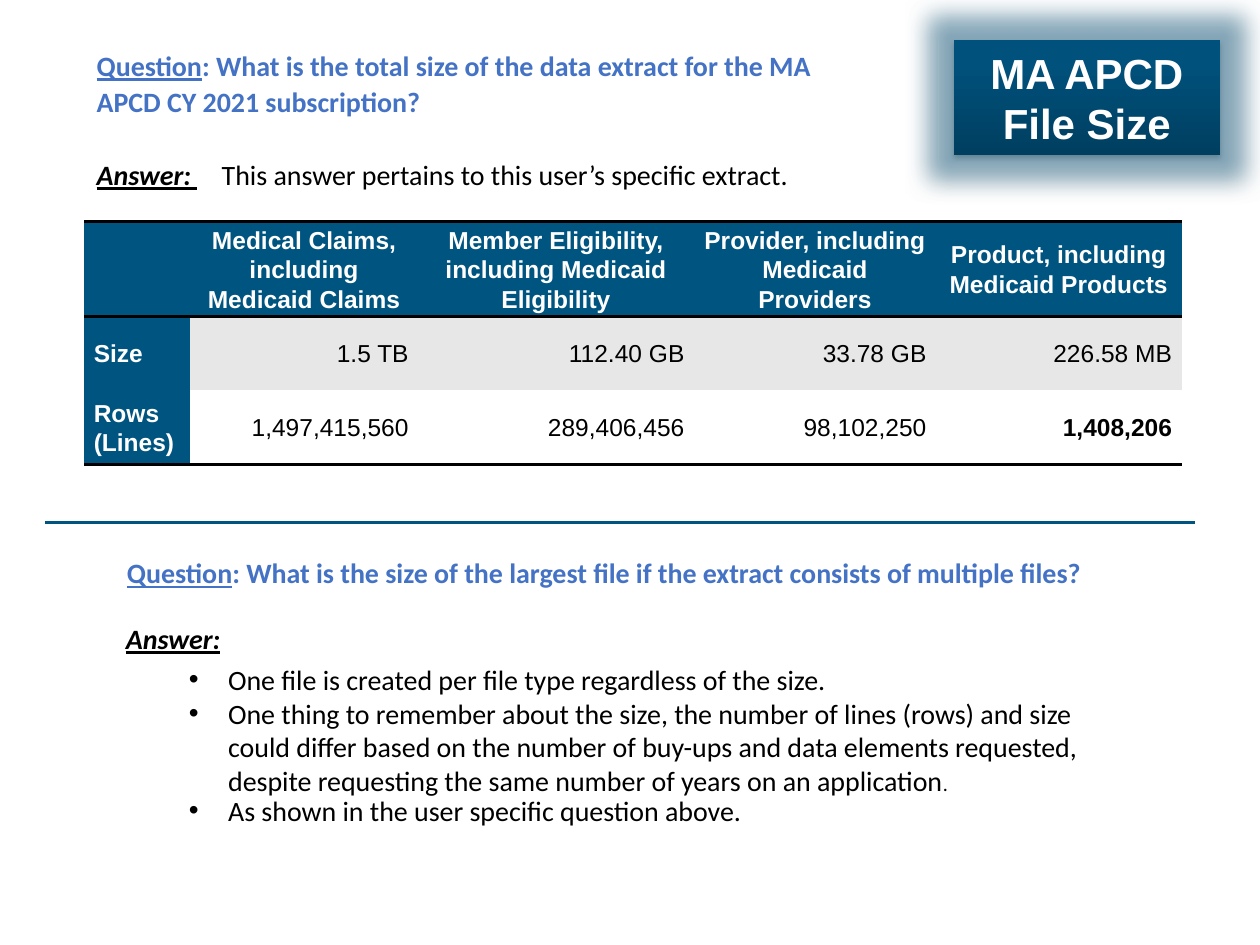
import lxml.etree
import pptx
import pptx.dml.color
import pptx.enum.shapes
import pptx.enum.text
import pptx.oxml
import pptx.oxml.ns
import pptx.util

Cm, Pt = pptx.util.Cm, pptx.util.Pt
ALIGN, ANCHOR = pptx.enum.text.PP_ALIGN, pptx.enum.text.MSO_ANCHOR
COLORS = {"navy": "005480", "blue": "4472C4", "black": "000000", "white": "FFFFFF",
          "band": "E7E7E7", "deep": "003F60", "mid": "00517C", "light": "00527D"}
NAMESPACE = 'xmlns:a="http://schemas.openxmlformats.org/drawingml/2006/main"'

# Run styles
LABEL = dict(color="blue", bold=True, underline=True)
QUESTION = dict(color="blue", bold=True)
ANSWER = dict(bold=True, italic=True, underline=True)
BODY = dict()
BULLET = dict(bullet=True)

# Text boxes: place in cm, anchor, paragraphs of (runs, format)
TEXTS = [
    ((1.7, 0.81, 15.77, 3.15), ANCHOR.TOP, [
        ([("Question", LABEL),
          (": What is the total size of the data extract for the MA APCD CY 2021 subscription?",
           QUESTION)], dict(spacing=1.07, after=21)),
        ([("Answer: ", ANSWER)], dict(spacing=1.07)),
    ]),
    ((4.22, 3.05, 17.73, 1.7), ANCHOR.TOP, [
        ([("This answer pertains to this user’s specific extract.", BODY)], dict()),
    ]),
    ((2.31, 10.8, 21.26, 1.22), ANCHOR.BOTTOM, [
        ([("Question", LABEL),
          (": What is the size of the largest file if the extract consists of multiple files?",
           QUESTION)], dict(spacing=0.9, after=6)),
    ]),
    ((2.29, 12.19, 20.42, 4.9), ANCHOR.MIDDLE, [
        ([("Answer:", ANSWER)], dict(spacing=0.9, after=6)),
        ([("One file is created per file type regardless of the size.", BODY)],
         dict(BULLET, spacing=0.9)),
        ([("One thing to remember about the size, the number of lines (rows) and size could "
           "differ based on the number of buy-ups and data elements requested, despite "
           "requesting the same number of years on an application", BODY),
          (".", dict(font="Lato", size=11))], BULLET),
        ([("As shown in the user specific question above.", BODY)],
         dict(BULLET, spacing=0.9, after=6)),
    ]),
]

TITLE = "MA APCD File Size"
TITLE_PLACE = (19.23, 0.81, 5.36, 2.31)
TABLE = [
    ["", "Medical Claims, including Medicaid Claims",
     "Member Eligibility, including Medicaid Eligibility",
     "Provider, including Medicaid Providers", "Product, including Medicaid Products"],
    ["Size", "1.5 TB", "112.40 GB", "33.78 GB", "226.58 MB"],
    ["Rows (Lines)", "1,497,415,560", "289,406,456", "98,102,250", "1,408,206"],
]
TABLE_CORNER = (1.7, 4.47)
COLUMN_WIDTHS = (2.13, 4.6, 5.56, 4.88, 4.95)
ROW_HEIGHTS = (1.91, 1.49, 1.49)
NO_GRID_STYLE = "{2D5ABB26-0587-4C30-8999-92F81FD0307C}"


def rgb(name):
    return pptx.dml.color.RGBColor.from_string(COLORS[name])


def add_xml(parent, xml, index=None):
    element = pptx.oxml.parse_xml(xml.replace(">", f" {NAMESPACE}>", 1)
                                  if "/>" not in xml.split(">")[0] + ">"
                                  else xml.replace("/>", f" {NAMESPACE}/>", 1))
    parent.insert(len(parent) if index is None else index, element)


def add_run(para, text, font="Calibri", size=16, color="black",
            bold=False, italic=False, underline=False):
    span = para.add_run()
    span.text = text
    span.font.name, span.font.size = font, Pt(size)
    span.font.bold, span.font.italic, span.font.underline = bold, italic, underline
    span.font.color.rgb = rgb(color)


def format_para(para, spacing=None, after=0, bullet=False):
    para.line_spacing, para.space_after = spacing, Pt(after)
    if bullet:
        properties = para._p.get_or_add_pPr()
        properties.set("marL", str(Cm(2.06)))
        properties.set("indent", str(-Cm(0.79)))
        add_xml(properties, '<a:buFont typeface="Arial"/>')
        add_xml(properties, '<a:buChar char="•"/>')


def add_text(slide, place, anchor, paragraphs):
    frame = slide.shapes.add_textbox(*map(Cm, place)).text_frame
    frame.word_wrap, frame.vertical_anchor = True, anchor
    for number, (runs, layout) in enumerate(paragraphs):
        para = frame.add_paragraph() if number else frame.paragraphs[0]
        format_para(para, **layout)
        for text, style in runs:
            add_run(para, text, **style)


def add_border(cell, side, index):
    add_xml(cell._tc.get_or_add_tcPr(),
            f'<a:{side} w="{Pt(2)}"><a:solidFill><a:srgbClr val="{COLORS["black"]}"/>'
            f'</a:solidFill></a:{side}>', index)


def fill_cell(cell, text, row, column):
    heading = row == 0 or column == 0
    cell.fill.solid()
    cell.fill.fore_color.rgb = rgb("navy" if heading else "band" if row == 1 else "white")
    cell.margin_left = cell.margin_right = Cm(0.19)
    cell.margin_top = cell.margin_bottom = 0
    cell.vertical_anchor = ANCHOR.MIDDLE
    if row != 1:
        add_border(cell, "lnB", 0)
    if row == 0:
        add_border(cell, "lnT", 0)
    if text:
        para = cell.text_frame.paragraphs[0]
        format_para(para, spacing=1.07, after=8)
        para.alignment = ALIGN.CENTER if row == 0 else ALIGN.RIGHT if column else ALIGN.LEFT
        last = row == len(TABLE) - 1 and column == len(COLUMN_WIDTHS) - 1
        add_run(para, text, "Arial", 14, "white" if heading else "black", heading or last)


def add_size_table(slide):
    size = (sum(COLUMN_WIDTHS), sum(ROW_HEIGHTS))
    frame = slide.shapes.add_table(len(TABLE), len(COLUMN_WIDTHS),
                                   *map(Cm, TABLE_CORNER + size))
    table = frame.table
    table.horz_banding = table.first_row = False
    table._tbl.tblPr.find(pptx.oxml.ns.qn("a:tableStyleId")).text = NO_GRID_STYLE
    for column, width in zip(table.columns, COLUMN_WIDTHS):
        column.width = Cm(width)
    for row, height in zip(table.rows, ROW_HEIGHTS):
        row.height = Cm(height)
    for row, texts in enumerate(TABLE):
        for column, text in enumerate(texts):
            fill_cell(table.cell(row, column), text, row, column)


def format_title(title):
    title.left, title.top, title.width, title.height = map(Cm, TITLE_PLACE)
    frame = title.text_frame
    frame.word_wrap, frame.vertical_anchor = True, ANCHOR.MIDDLE
    para = frame.paragraphs[0]
    para.alignment = ALIGN.CENTER
    add_run(para, TITLE, "Arial", 24, "white", bold=True)
    # Gradient from the bottom up, with a glow and a soft shadow
    stops = "".join(f'<a:gs pos="{position * 1000}"><a:srgbClr val="{COLORS[name]}"/></a:gs>'
                    for position, name in ((0, "deep"), (80, "mid"), (100, "light")))
    properties = title._element.spPr
    add_xml(properties, '<a:gradFill rotWithShape="1"><a:gsLst>' + stops +
            '</a:gsLst><a:lin ang="16200000" scaled="0"/></a:gradFill>')
    add_xml(properties, f'<a:effectLst><a:glow rad="{Pt(28)}"><a:srgbClr val="{COLORS["navy"]}">'
            '<a:alpha val="40000"/></a:srgbClr></a:glow>'
            f'<a:outerShdw blurRad="{Pt(3.1)}" dist="{Pt(1.8)}" dir="5400000" rotWithShape="0">'
            f'<a:srgbClr val="{COLORS["black"]}"><a:alpha val="35000"/></a:srgbClr>'
            '</a:outerShdw></a:effectLst>')


def main():
    deck = pptx.Presentation()
    deck.slide_width, deck.slide_height = Cm(25.4), Cm(19.05)
    slide = deck.slides.add_slide(deck.slide_layouts[5])
    format_title(slide.shapes.title)
    add_size_table(slide)
    for place, anchor, paragraphs in TEXTS:
        add_text(slide, place, anchor, paragraphs)

    # Divider between the two questions
    divider = slide.shapes.add_connector(pptx.enum.shapes.MSO_CONNECTOR.STRAIGHT,
                                         Cm(0.91), Cm(10.54), Cm(24.08), Cm(10.54))
    divider.line.color.rgb, divider.line.width = rgb("navy"), Pt(1.5)
    add_xml(divider._element.spPr, "<a:effectLst/>")
    deck.save("out.pptx")


if __name__ == "__main__":
    main()
